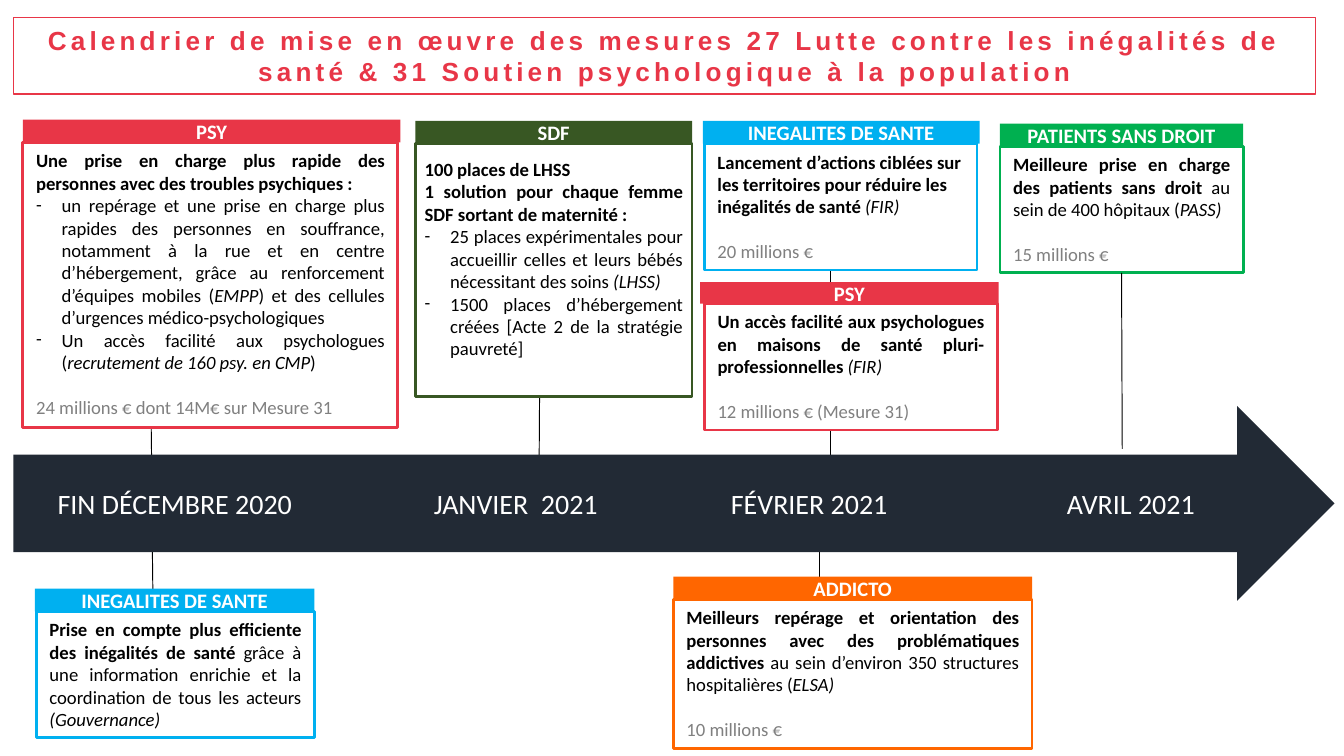
from lxml.etree import SubElement
from pptx import Presentation
from pptx.dml.color import RGBColor
from pptx.enum.shapes import MSO_CONNECTOR, MSO_SHAPE
from pptx.enum.text import MSO_ANCHOR, PP_ALIGN
from pptx.oxml.ns import qn
from pptx.util import Inches, Pt

RED = RGBColor(0xE8, 0x36, 0x47)
GREEN = RGBColor(0x00, 0xB0, 0x50)
OLIVE = RGBColor(0x38, 0x57, 0x23)
BLUE = RGBColor(0x00, 0xB0, 0xF0)
ORANGE = RGBColor(0xFF, 0x66, 0x00)
NAVY = RGBColor(0x22, 0x2A, 0x35)
GREY = RGBColor(0x80, 0x80, 0x80)
BLACK = RGBColor(0, 0, 0)
WHITE = RGBColor(0xFF, 0xFF, 0xFF)

BULLET_INDENT = 0.19
BOTTOM_SIDE = 2


def format_font(font, size, color, bold=False, italic=False, name="Calibri"):
    font.name, font.size, font.bold, font.italic = name, Pt(size), bold, italic
    font.color.rgb = color


def add_block(slide, kind, box, fill=None, line=None, line_width=1.5):
    block = slide.shapes.add_shape(kind, *map(Inches, box))
    block.shadow.inherit = False
    if fill is None:
        block.fill.background()
    else:
        block.fill.solid()
        block.fill.fore_color.rgb = fill
    if line is None:
        block.line.fill.background()
    else:
        block.line.color.rgb = line
        block.line.width = Pt(line_width)
    return block


def set_frame(frame, anchor, insets=(0.1, 0.05, 0.1, 0.05)):
    frame.word_wrap = True
    frame.vertical_anchor = anchor
    (frame.margin_left, frame.margin_top,
     frame.margin_right, frame.margin_bottom) = map(Inches, insets)


def add_link(slide, start, end):
    link = slide.shapes.add_connector(
        MSO_CONNECTOR.STRAIGHT, *map(Inches, start + end))
    link.line.color.rgb = BLACK
    link.line.width = Pt(0.5)
    SubElement(link._element.spPr, qn("a:effectLst"))
    return link


def add_title(slide, box, wording):
    banner = add_block(slide, MSO_SHAPE.RECTANGLE, box, line=RED, line_width=0.75)
    set_frame(banner.text_frame, MSO_ANCHOR.TOP)
    banner.text_frame.text = wording
    paragraph = banner.text_frame.paragraphs[0]
    paragraph.alignment = PP_ALIGN.CENTER
    run = paragraph.runs[0]
    format_font(run.font, 14, RED, bold=True, name="Arial")
    run.font._element.set("spc", "220")


def add_timeline(slide, box, months):
    left, top, width, height = box
    add_block(slide, MSO_SHAPE.RIGHT_ARROW, box, fill=NAVY)
    label_height = 0.35
    for offset, label_width, wording in months:
        label = slide.shapes.add_textbox(
            Inches(left + offset), Inches(top + (height - label_height) / 2),
            Inches(label_width), Inches(label_height))
        set_frame(label.text_frame, MSO_ANCHOR.TOP)
        label.text_frame.text = wording
        format_font(label.text_frame.paragraphs[0].runs[0].font, 15, WHITE)


def fill_paragraph(paragraph, kind, pieces, alignment):
    paragraph.alignment = alignment
    if kind == "bullet":
        properties = paragraph._p.get_or_add_pPr()
        properties.set("marL", str(Inches(BULLET_INDENT)))
        properties.set("indent", str(-Inches(BULLET_INDENT)))
        SubElement(properties, qn("a:buFont")).set("typeface", "Calibri")
        SubElement(properties, qn("a:buChar")).set("char", "-")
    if kind == "budget":
        paragraph.space_before = Pt(12)
    for wording, style in pieces:
        run = paragraph.add_run()
        run.text = wording
        format_font(run.font, 10, GREY if kind == "budget" else BLACK,
                    bold=style == "bold", italic=style == "italic")


def add_card(slide, box, color, theme, measures, tab_height=0.17, overhang=(0, 0),
             alignment=PP_ALIGN.JUSTIFY, anchor=MSO_ANCHOR.TOP,
             insets=(0.1, 0.05, 0.1, 0.05)):
    left, top, width, height = box
    body = add_block(slide, MSO_SHAPE.RECTANGLE,
                     (left, top + tab_height, width, height - tab_height), WHITE, color)
    set_frame(body.text_frame, anchor, insets)
    for index, (kind, pieces) in enumerate(measures):
        frame = body.text_frame
        paragraph = frame.add_paragraph() if index else frame.paragraphs[0]
        fill_paragraph(paragraph, kind, pieces, alignment)

    before, after = overhang
    tab = add_block(slide, MSO_SHAPE.RECTANGLE,
                    (left - before, top, width + before + after, tab_height), color)
    set_frame(tab.text_frame, MSO_ANCHOR.MIDDLE, (0.1, 0, 0.1, 0))
    tab.text_frame.text = theme
    heading = tab.text_frame.paragraphs[0]
    heading.alignment = PP_ALIGN.CENTER
    format_font(heading.runs[0].font, 11, WHITE, bold=True)
    return body


def build_calendar(slide):
    for start, end in [((6.1, 3.83), (6.1, 5.41)), ((1.13, 3.78), (1.15, 5.46)),
                       ((6.18, 1.87), (6.18, 3.44)), ((1.11, 1.9), (1.13, 3.58)),
                       ((4.02, 2.18), (4.01, 3.68))]:
        add_link(slide, start, end)

    add_timeline(slide, (0.1, 3.02, 9.83, 1.45), [
        (0.23, 2.01, "FIN DÉCEMBRE 2020"), (3.03, 1.48, "JANVIER  2021"),
        (5.24, 1.47, "FÉVRIER 2021"), (7.74, 1.86, "AVRIL 2021")])

    add_card(slide, (0.17, 0.89, 2.79, 2.29), RED, "PSY", [
        ("plain", [("Une prise en charge plus rapide des personnes avec des "
                    "troubles psychiques :", "bold")]),
        ("bullet", [("un repérage et une prise en charge plus rapides des personnes "
                     "en souffrance, notamment à la rue et en centre d’hébergement, "
                     "grâce au renforcement d’équipes mobiles (", ""),
                    ("EMPP", "italic"),
                    (") et des cellules d’urgences médico-psychologiques", "")]),
        ("bullet", [("Un accès facilité aux psychologues (", ""),
                    ("recrutement de 160 psy. en CMP", "italic"), (")", "")]),
        ("budget", [("24 millions € dont 14M€ sur Mesure 31", "")]),
    ], overhang=(0, 0.02))

    add_card(slide, (3.09, 0.9, 2.06, 2.05), OLIVE, "SDF", [
        ("plain", [("100 places de LHSS", "bold")]),
        ("plain", [("1 solution pour chaque femme SDF sortant de maternité :", "bold")]),
        ("bullet", [("25 places expérimentales pour accueillir celles et leurs bébés "
                     "nécessitant des soins ", ""), ("(LHSS)", "italic")]),
        ("bullet", [("1500 places d’hébergement créées [Acte 2 de la stratégie "
                     "pauvreté]", "")]),
    ], anchor=MSO_ANCHOR.MIDDLE, insets=(0.07, 0.03, 0.07, 0.2))

    add_card(slide, (5.24, 0.9, 2.03, 1.11), BLUE, "INEGALITES DE SANTE", [
        ("plain", [("Lancement d’actions ciblées sur les territoires pour réduire les "
                    "inégalités de santé ", "bold"), ("(FIR)", "italic")]),
        ("budget", [("20 millions €", "")]),
    ], overhang=(0.01, 0.02), alignment=PP_ALIGN.LEFT)

    add_card(slide, (5.24, 2.1, 2.18, 1.1), RED, "PSY", [
        ("plain", [("Un accès facilité aux psychologues en maisons de santé "
                    "pluri-professionnelles ", "bold"), ("(FIR)", "italic")]),
        ("budget", [("12 millions € (Mesure 31)", "")]),
    ], tab_height=0.16, overhang=(0.03, 0.01))

    rights = add_card(slide, (7.44, 0.92, 1.81, 1.11), GREEN, "PATIENTS SANS DROIT", [
        ("plain", [("Meilleure prise en charge des patients sans droit ", "bold"),
                   ("au sein de 400 hôpitaux (", ""), ("PASS)", "italic")]),
        ("budget", [("15 millions €", "")]),
    ])
    add_link(slide, (8.34, 2.03), (8.35, 3.34)).begin_connect(rights, BOTTOM_SIDE)

    add_card(slide, (0.27, 4.38, 2.07, 1.11), BLUE, "INEGALITES DE SANTE", [
        ("plain", [("Prise en compte plus efficiente des inégalités de santé ", "bold"),
                   ("grâce à une information enrichie et la coordination de tous les "
                    "acteurs ", ""), ("(Gouvernance)", "italic")]),
    ], overhang=(0.01, 0))

    add_card(slide, (5.01, 4.29, 2.67, 1.28), ORANGE, "ADDICTO", [
        ("plain", [("Meilleurs repérage et orientation des personnes avec des "
                    "problématiques addictives", "bold"),
                   (" au sein d’environ 350 structures hospitalières (", ""),
                   ("ELSA)", "italic")]),
        ("budget", [("10 millions €", "")]),
    ])

    add_title(slide, (0.1, 0.13, 9.69, 0.57),
              "Calendrier de mise en œuvre des mesures 27 Lutte contre les inégalités "
              "de santé & 31 Soutien psychologique à la population")


def main():
    presentation = Presentation()
    presentation.slide_width = Inches(10)
    presentation.slide_height = presentation.slide_width * 9 // 16
    build_calendar(presentation.slides.add_slide(presentation.slide_layouts[6]))
    presentation.save("out.pptx")


if __name__ == "__main__":
    main()
